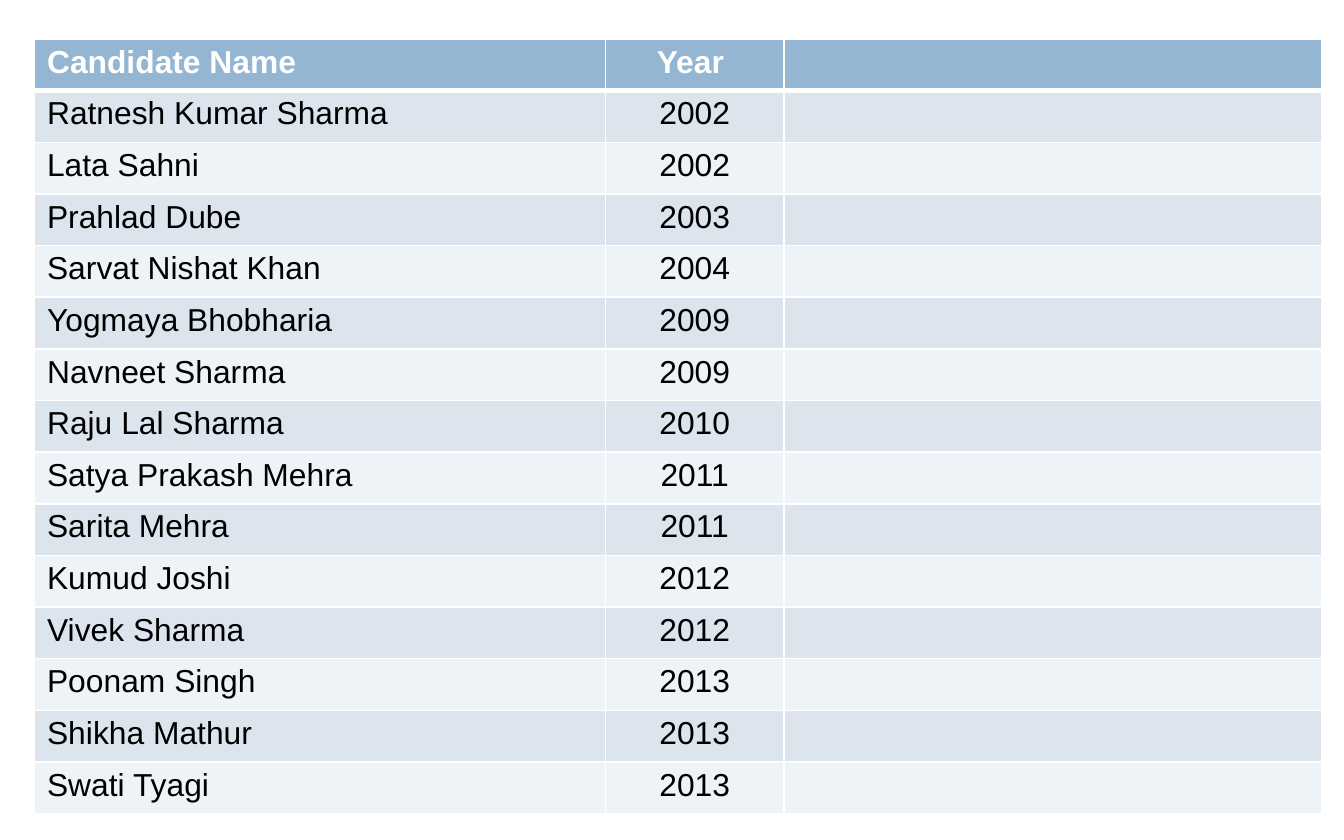
"""Build a slide with a table of candidates and their years."""
from dataclasses import dataclass
from typing import NamedTuple

from lxml import etree
from pptx import Presentation
from pptx import util as u
from pptx.dml.color import RGBColor
from pptx.enum import text
from pptx.oxml import ns
from pptx.table import Table, _Cell


@dataclass(frozen=True)
class Theme:
    face: str = "Arial"
    size: float = 17
    head: str = "94B6D2"
    bands: tuple[str, str] = ("DCE5EE", "EEF3F7")
    light: str = "FFFFFF"
    dark: str = "000000"
    thin: float = 1
    thick: float = 3


class Entry(NamedTuple):
    name: str
    year: str


class Look(NamedTuple):
    fill: str
    ink: str
    bold: bool
    top: float
    base: float


THEME = Theme()
LEFT, TOP, HIGH = 0.64, 0.74, 14.45
WIDTHS = (10.8, 3.38, 10.16)
ALIGNS = (text.PP_ALIGN.LEFT, text.PP_ALIGN.CENTER, text.PP_ALIGN.LEFT)
INSETS = {"margin_left": 0.25, "margin_right": 0.25,
          "margin_top": 0.1, "margin_bottom": 0.1}
TITLE = Entry("Candidate Name", "Year ")
ROWS = (
    Entry("Ratnesh Kumar Sharma", "2002"),
    Entry("Lata Sahni", "2002"),
    Entry("Prahlad Dube", "2003"),
    Entry("Sarvat Nishat Khan", "2004"),
    Entry("Yogmaya Bhobharia", "2009"),
    Entry("Navneet Sharma", "2009"),
    Entry("Raju Lal Sharma", "2010"),
    Entry("Satya Prakash Mehra", "2011"),
    Entry("Sarita Mehra", "2011"),
    Entry("Kumud Joshi", "2012"),
    Entry("Vivek Sharma", "2012"),
    Entry("Poonam Singh", "2013"),
    Entry("Shikha Mathur", "2013"),
    Entry("Swati Tyagi", "2013"),
)


def add_edge(cell: _Cell, side: str, width: float) -> None:
    """Give one side of a cell a solid light border."""
    props = cell._tc.get_or_add_tcPr()
    line = etree.SubElement(props, ns.qn(f"a:ln{side}"), w=str(u.Pt(width)))
    fill = etree.SubElement(line, ns.qn("a:solidFill"))
    etree.SubElement(fill, ns.qn("a:srgbClr"), val=THEME.light)


def draw_cell(cell: _Cell, words: str, align: text.PP_ALIGN, look: Look) -> None:
    """Fill, border and letter one cell."""
    edges = {"L": THEME.thin, "R": THEME.thin, "T": look.top, "B": look.base}
    for side, width in edges.items():
        add_edge(cell, side, width)
    cell.fill.solid()
    cell.fill.fore_color.rgb = RGBColor.from_string(look.fill)
    for key, value in INSETS.items():
        setattr(cell, key, u.Cm(value))
    if not words:
        return
    para = cell.text_frame.paragraphs[0]
    para.alignment = align
    run = para.add_run()
    run.text = words
    style = {"name": THEME.face, "size": u.Pt(THEME.size), "bold": look.bold}
    for key, value in style.items():
        setattr(run.font, key, value)
    run.font.color.rgb = RGBColor.from_string(look.ink)


def draw_row(table: Table, index: int, entry: Entry) -> None:
    """Draw the header or one banded row."""
    if index == 0:
        look = Look(THEME.head, THEME.light, True, THEME.thin, THEME.thick)
    else:
        top = THEME.thick if index == 1 else THEME.thin
        band = THEME.bands[(index - 1) % 2]
        look = Look(band, THEME.dark, False, top, THEME.thin)
    for col, (words, align) in enumerate(zip((*entry, ""), ALIGNS)):
        draw_cell(table.cell(index, col), words, align, look)


def main() -> None:
    """Make the deck and save it."""
    deck = Presentation()
    deck.slide_width, deck.slide_height = u.Cm(25.4), u.Cm(15.88)
    slide = deck.slides.add_slide(deck.slide_layouts[6])
    lines = (TITLE, *ROWS)
    table = slide.shapes.add_table(
        len(lines), len(WIDTHS), u.Cm(LEFT), u.Cm(TOP),
        u.Cm(sum(WIDTHS)), u.Cm(HIGH)).table
    for col, width in zip(table.columns, WIDTHS):
        col.width = u.Cm(width)
    for index, entry in enumerate(lines):
        draw_row(table, index, entry)
    deck.save("out.pptx")


if __name__ == "__main__":
    main()
